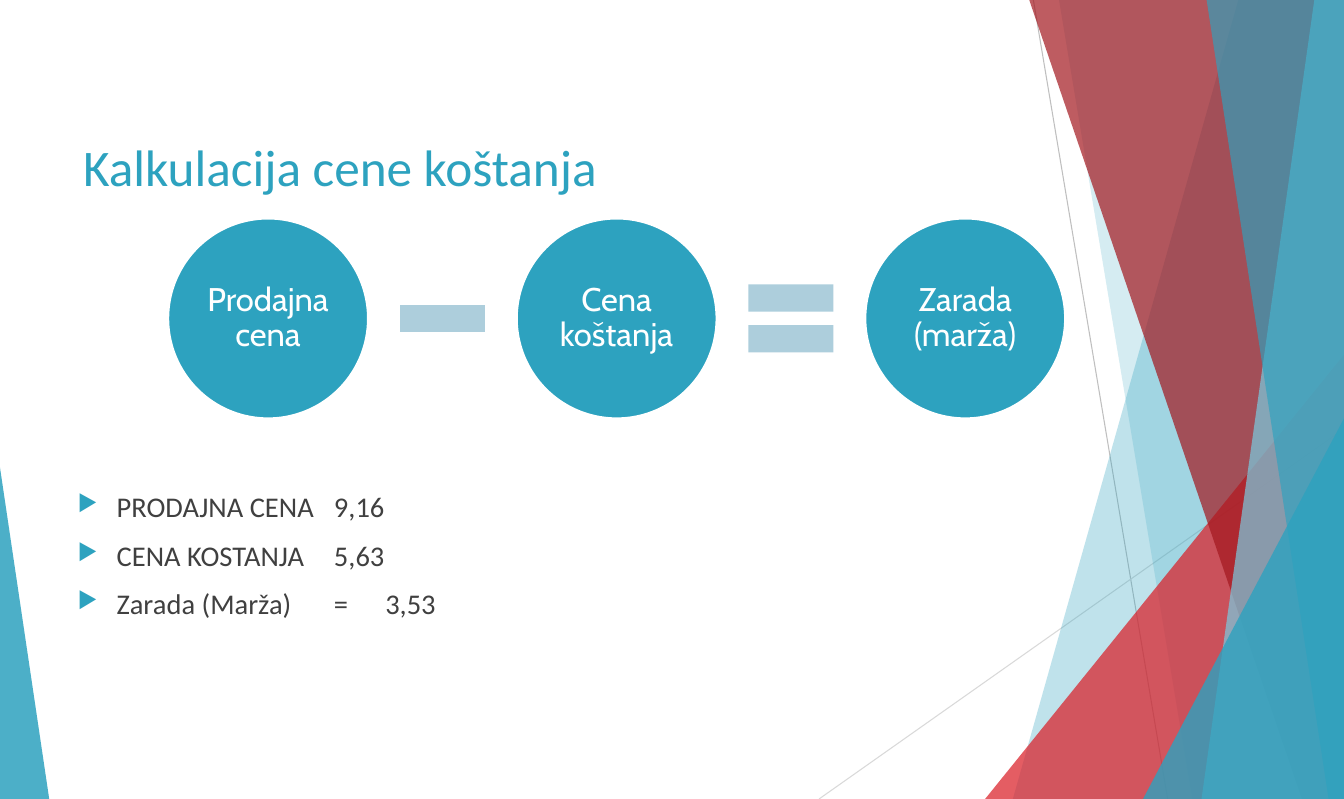
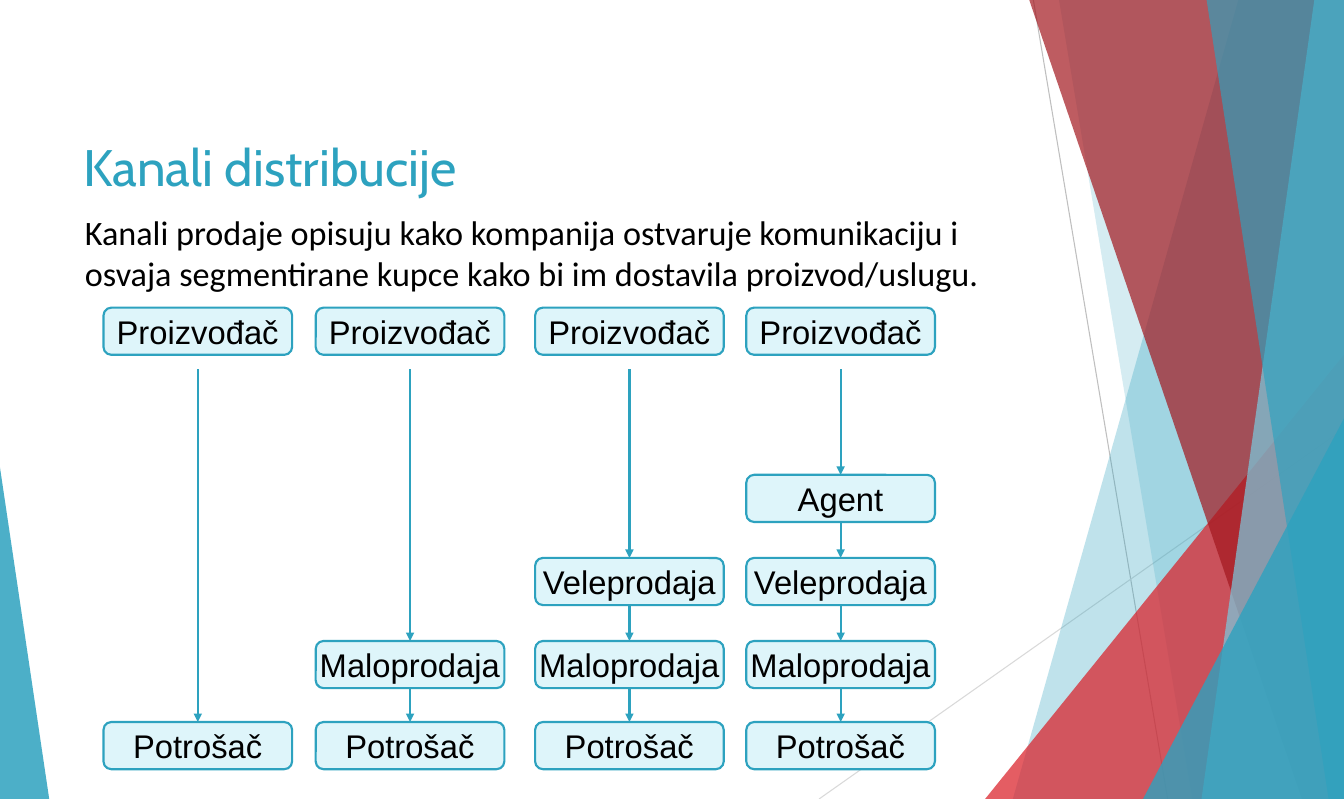
"""Builds two slides on product costing and distribution channels."""
from lxml.etree import SubElement
from pptx import Presentation
from pptx.dml.color import RGBColor
from pptx.enum.shapes import MSO_CONNECTOR, MSO_SHAPE, PP_PLACEHOLDER
from pptx.enum.text import MSO_ANCHOR, PP_ALIGN
from pptx.oxml.ns import qn
from pptx.util import Inches, Pt

HUES = {
    "teal": "2DA2BF", "sky": "7ACBE0", "red": "DA1F28", "wine": "A3171E",
    "mist": "ADCEDC", "ice": "DEF5FA", "ink": "404040", "black": "000000",
    "white": "FFFFFF", "gray": "BFBFBF", "pale": "D9D9D9",
}
WIDE, HIGH = 13.11, 7.79


def style(shape, fill=None, line=None, width=1.5, alpha=None):
    """Set fill, line and opacity, and drop the shadow."""
    if line:
        shape.line.color.rgb = RGBColor.from_string(HUES[line])
        shape.line.width = Pt(width)
    else:
        shape.line.fill.background()
    if not fill:
        SubElement(shape.element.spPr, qn("a:effectLst"))
        return
    shape.fill.solid()
    shape.fill.fore_color.rgb = RGBColor.from_string(HUES[fill])
    shape.shadow.inherit = False
    if alpha:
        tone = shape.element.spPr.find(qn("a:solidFill"))[0]
        SubElement(tone, qn("a:alpha"), val=str(alpha * 1000))


def write(par, text, size, face, hue, align=PP_ALIGN.LEFT):
    """Add one formatted run to a paragraph."""
    par.alignment = align
    run = par.add_run()
    run.text = text
    run.font.size = Pt(size)
    run.font.name = face
    run.font.color.rgb = RGBColor.from_string(HUES[hue])


prs = Presentation()
prs.slide_width, prs.slide_height = Inches(WIDE), Inches(HIGH)
layout = prs.slide_layouts[5]
for holder in list(layout.placeholders):
    if holder.placeholder_format.type == PP_PLACEHOLDER.TITLE:
        holder.left, holder.top = Inches(0.71), Inches(1.27)
        holder.width, holder.height = Inches(9.21), Inches(1.21)
    else:
        layout.shapes.element.remove(holder.element)

slides = []
for text, face in (("Kalkulacija cene koštanja", "Calibri"),
                   ("Kanali distribucije", "Cabin")):
    slide = prs.slides.add_slide(layout)
    frame = slide.shapes.title.text_frame
    frame.vertical_anchor = MSO_ANCHOR.TOP
    write(frame.paragraphs[0], text, 36, face, "teal")
    slides.append(slide)
cost, sales = slides

decor = []
for x1, y1, x2, y2, hue in ((10.08, 0, 11.39, HIGH, "gray"),
                            (WIDE, 4.18, 7.99, HIGH, "pale")):
    rule = cost.shapes.add_connector(
        MSO_CONNECTOR.STRAIGHT, Inches(x1), Inches(y1), Inches(x2), Inches(y2))
    style(rule, line=hue, width=0.75)
    decor.append(rule)

# noqa
bands = (
    ((12.08, 9.88), "teal", 30),
    ((10.33, 11.63), "teal", 20),
    ((9.61, 3.46, 3.5, 1), "red", 72),
    ((10.04, 12.7), "wine", 70),
    ((12.82, 11.72), "sky", 70),
    ((11.77, 12.96), "teal", 65),
    ((11.15, 4.08, 1.96, 1), "teal", 80),
    ((0, 4.56, 0.48, 0), "teal", 85),
)
for form, hue, alpha in bands:
    if len(form) == 2:
        upper, lower = form
        path = cost.shapes.build_freeform(Inches(upper), 0)
        path.add_line_segments(
            [(Inches(x), Inches(y)) for x, y in
             ((WIDE, 0), (WIDE, HIGH), (lower, HIGH))], close=True)
        band = path.convert_to_shape()
    else:
        left, top, width, peak = form
        band = cost.shapes.add_shape(
            MSO_SHAPE.ISOSCELES_TRIANGLE, Inches(left), Inches(top),
            Inches(width), Inches(HIGH - top))
        band.adjustments[0] = peak
    style(band, hue, alpha=alpha)
    decor.append(band)
for part in decor:
    layout.shapes.element.append(part.element)

for i, text in enumerate(("Prodajna cena", "Cena koštanja", "Zarada (marža)")):
    disc = cost.shapes.add_shape(
        MSO_SHAPE.OVAL, Inches(1.64 + 3.4 * i), Inches(2.13),
        Inches(1.95), Inches(1.95))
    style(disc, "teal", "white")
    frame = disc.text_frame
    frame.word_wrap = True
    frame.vertical_anchor = MSO_ANCHOR.MIDDLE
    frame.margin_left = frame.margin_right = Inches(0.03)
    frame.margin_top = frame.margin_bottom = Inches(0.03)
    frame.paragraphs[0].line_spacing = 0.9
    write(frame.paragraphs[0], text, 23, "Cabin", "white", PP_ALIGN.CENTER)
for i, kind in enumerate((MSO_SHAPE.MATH_MINUS, MSO_SHAPE.MATH_EQUAL)):
    sign = cost.shapes.add_shape(
        kind, Inches(3.75 + 3.4 * i), Inches(2.54), Inches(1.13), Inches(1.13))
    style(sign, "mist")

frame = cost.shapes.add_textbox(
    Inches(0.66), Inches(4.72), Inches(9), Inches(1.5)).text_frame
frame.word_wrap = True
for i, text in enumerate(("PRODAJNA CENA\t9,16", "CENA KOSTANJA\t5,63",
                          "Zarada (Marža)\t=\t3,53")):
    par = frame.add_paragraph() if i else frame.paragraphs[0]
    props = par._p.get_or_add_pPr()
    props.set("marL", str(Inches(0.38)))
    props.set("indent", str(Inches(-0.38)))
    props.set("defTabSz", str(Inches(0.5)))
    if i:
        par.space_before = Pt(10)
    tint = SubElement(props, qn("a:buClr"))
    SubElement(tint, qn("a:srgbClr"), val=HUES["teal"])
    SubElement(props, qn("a:buSzPct"), val="80000")
    SubElement(props, qn("a:buChar"), char="▶")
    write(par, text, 20, "Calibri", "ink")

frame = sales.shapes.add_textbox(
    Inches(0.73), Inches(2.01), Inches(9.53), Inches(0.91)).text_frame
frame.word_wrap = True
write(frame.paragraphs[0],
      "Kanali prodaje opisuju kako kompanija ostvaruje komunikaciju i osvaja "
      "segmentirane kupce kako bi im dostavila proizvod/uslugu.",
      24, "Calibri", "black")

rows = {"Proizvođač": 3, "Agent": 4.63, "Veleprodaja": 5.44,
        "Maloprodaja": 6.25, "Potrošač": 7.04}
names = list(rows)
for i, left in enumerate((1.01, 3.08, 5.22, 7.28)):
    last = None
    for name in names[:1] + names[4 - i:]:
        box = sales.shapes.add_shape(
            MSO_SHAPE.ROUNDED_RECTANGLE, Inches(left), Inches(rows[name]),
            Inches(1.84), Inches(0.46))
        style(box, "ice", "teal")
        box.text_frame.word_wrap = False
        box.text_frame.vertical_anchor = MSO_ANCHOR.MIDDLE
        write(box.text_frame.paragraphs[0], name, 23, "Arial", "black",
              PP_ALIGN.CENTER)
        if last:
            mid = Inches(left + 0.92)
            arrow = sales.shapes.add_connector(
                MSO_CONNECTOR.STRAIGHT, mid, Inches(3.6), mid, box.top)
            if last.top > Inches(3):
                arrow.begin_connect(last, 2)
            arrow.end_connect(box, 0)
            style(arrow, line="teal")
            SubElement(arrow.element.spPr.find(qn("a:ln")), qn("a:tailEnd"),
                       type="triangle")
        last = box

prs.save("out.pptx")
